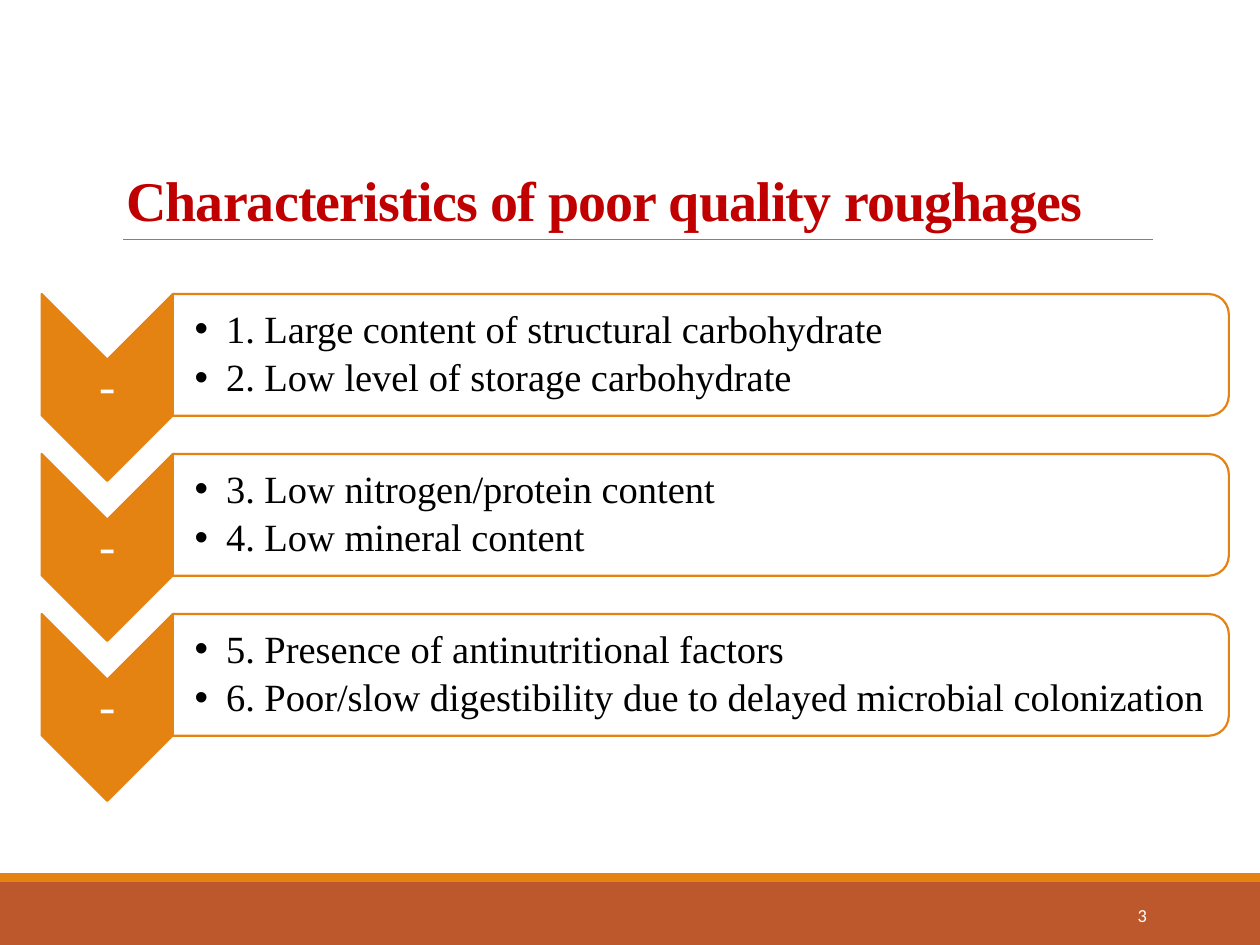
from lxml.etree import SubElement
from pptx import Presentation
from pptx.dml.color import RGBColor
from pptx.enum.shapes import MSO_CONNECTOR as Connector, MSO_SHAPE as Preset
from pptx.enum.text import MSO_ANCHOR as Anchor, MSO_AUTO_SIZE as AutoSize, PP_ALIGN as Align
from pptx.oxml.ns import qn
from pptx.util import Pt

ORANGE = RGBColor(0xE4, 0x83, 0x12)
RUST = RGBColor(0xBD, 0x58, 0x2C)
RED = RGBColor(0xC0, 0x00, 0x00)
GRAY = RGBColor(0x80, 0x80, 0x80)
WHITE = RGBColor(0xFF, 0xFF, 0xFF)
BLACK = RGBColor(0x00, 0x00, 0x00)
SERIF, SANS = "Times New Roman", "Calibri"

PAGE_WIDTH, PAGE_HEIGHT = 720, 540
ROW_TOP, ROW_STEP = 168, 91.44
ROWS = [
    ("1. Large content of structural carbohydrate",
     "2. Low level of storage carbohydrate"),
    ("3. Low nitrogen/protein content",
     "4. Low mineral content"),
    ("5. Presence of antinutritional factors",
     "6. Poor/slow digestibility due to delayed microbial colonization"),
]


def write_text(shape, lines, size, color, font=SERIF, bold=False, align=Align.LEFT,
               anchor=Anchor.MIDDLE, insets=(7.2, 3.6, 7.2, 3.6), line_spacing=1.0,
               after=0, tracking=None, bullet=None, indent=0):
    frame = shape.text_frame
    frame.word_wrap = True
    frame.auto_size = AutoSize.NONE
    frame.vertical_anchor = anchor
    (frame.margin_left, frame.margin_top,
     frame.margin_right, frame.margin_bottom) = map(Pt, insets)
    for index, line in enumerate(lines):
        para = frame.paragraphs[0] if index == 0 else frame.add_paragraph()
        para.alignment = align
        para.line_spacing = line_spacing
        para.space_before, para.space_after = Pt(0), Pt(after)
        span = para.add_run()
        span.text = line
        span.font.name, span.font.size, span.font.bold = font, Pt(size), bold
        span.font.color.rgb = color
        if tracking is not None:
            span.font._element.set("spc", str(round(tracking * 100)))
        if bullet:
            properties = para._p.get_or_add_pPr()
            properties.set("marL", str(Pt(indent)))
            properties.set("indent", str(-Pt(indent)))
            SubElement(properties, qn("a:buFont"), typeface="Arial")
            SubElement(properties, qn("a:buChar"), char=bullet)


def add_text(parent, box, lines, **text_format):
    shape = parent.shapes.add_textbox(*map(Pt, box))
    write_text(shape, lines, **text_format)


def add_block(parent, preset, box, fill, line=None):
    shape = parent.shapes.add_shape(preset, *map(Pt, box))
    shape.shadow.inherit = False
    shape.fill.solid()
    shape.fill.fore_color.rgb = fill
    if line is None:
        shape.line.fill.background()
    else:
        shape.line.color.rgb = line
        shape.line.width = Pt(1.25)
    return shape


def add_turned_block(parent, preset, box, fill, line):
    """Fill the given box with a preset turned a quarter clockwise."""
    left, top, width, height = box
    shift = (width - height) / 2
    shape = add_block(parent, preset, (left + shift, top - shift, height, width), fill, line)
    shape.rotation = 90
    return shape


def add_title(page, box):
    left, top, width, height = box
    title = page.shapes.title
    title.left, title.top, title.width, title.height = map(Pt, box)
    write_text(title, ["Characteristics of poor quality roughages"], size=32, color=RED,
               bold=True, anchor=Anchor.BOTTOM, line_spacing=0.85, tracking=-0.5)
    # Rule under the title
    base = Pt(top + height)
    rule = page.shapes.add_connector(Connector.STRAIGHT, Pt(left + 5.6), base,
                                     Pt(left + width), base)
    rule.line.color.rgb = GRAY
    rule.line.width = Pt(0.5)
    SubElement(rule._element.spPr, qn("a:effectLst"))


def add_footer(page, box):
    left, top, width, height = box
    stripe = 5
    add_block(page, Preset.RECTANGLE, (left, top + stripe, width, height - stripe), RUST)
    add_block(page, Preset.RECTANGLE, (left, top, width, stripe), ORANGE)
    add_text(page, (left + 584.6, top + 9.5, 77.8, 28.8), ["3"], size=10.5, color=WHITE,
             font=SANS, align=Align.RIGHT)


def add_row(group, box, lines):
    left, top, width, height = box
    arrow_width, arrow_height = 75, 106.8
    panel_left = left + arrow_width
    # Chevron with its label
    add_turned_block(group, Preset.CHEVRON, (left, top, arrow_width, arrow_height),
                     ORANGE, ORANGE)
    add_text(group, (left, top + arrow_width / 2, arrow_width, arrow_height - arrow_width),
             ["-"], size=28, color=WHITE, align=Align.CENTER, insets=(1.4,) * 4,
             line_spacing=0.9, after=10)
    # Panel with its points
    panel = add_turned_block(group, Preset.ROUND_2_SAME_RECTANGLE,
                             (panel_left, top, width - arrow_width, height), WHITE, ORANGE)
    tint = panel.fill._xPr.find(qn("a:solidFill"))[0]
    SubElement(tint, qn("a:alpha"), val="90000")
    add_text(group, (panel_left, top + 3.4, width - arrow_width - 3.4, height - 6.8), lines,
             size=22, color=BLACK, insets=(12.4, 1.4, 1.4, 1.4), line_spacing=0.9, after=4,
             bullet="•", indent=18)


def main():
    deck = Presentation()
    deck.slide_width, deck.slide_height = Pt(PAGE_WIDTH), Pt(PAGE_HEIGHT)
    page = deck.slides.add_slide(deck.slide_layouts[5])
    add_footer(page, (0, 499, PAGE_WIDTH, PAGE_HEIGHT - 499))
    add_title(page, (64.8, 22.3, 594, 114.5))
    group = page.shapes.add_group_shape()
    for index, lines in enumerate(ROWS):
        add_row(group, (23.8, ROW_TOP + index * ROW_STEP, 678.4, 69.6), lines)
    deck.save("out.pptx")


if __name__ == "__main__":
    main()
